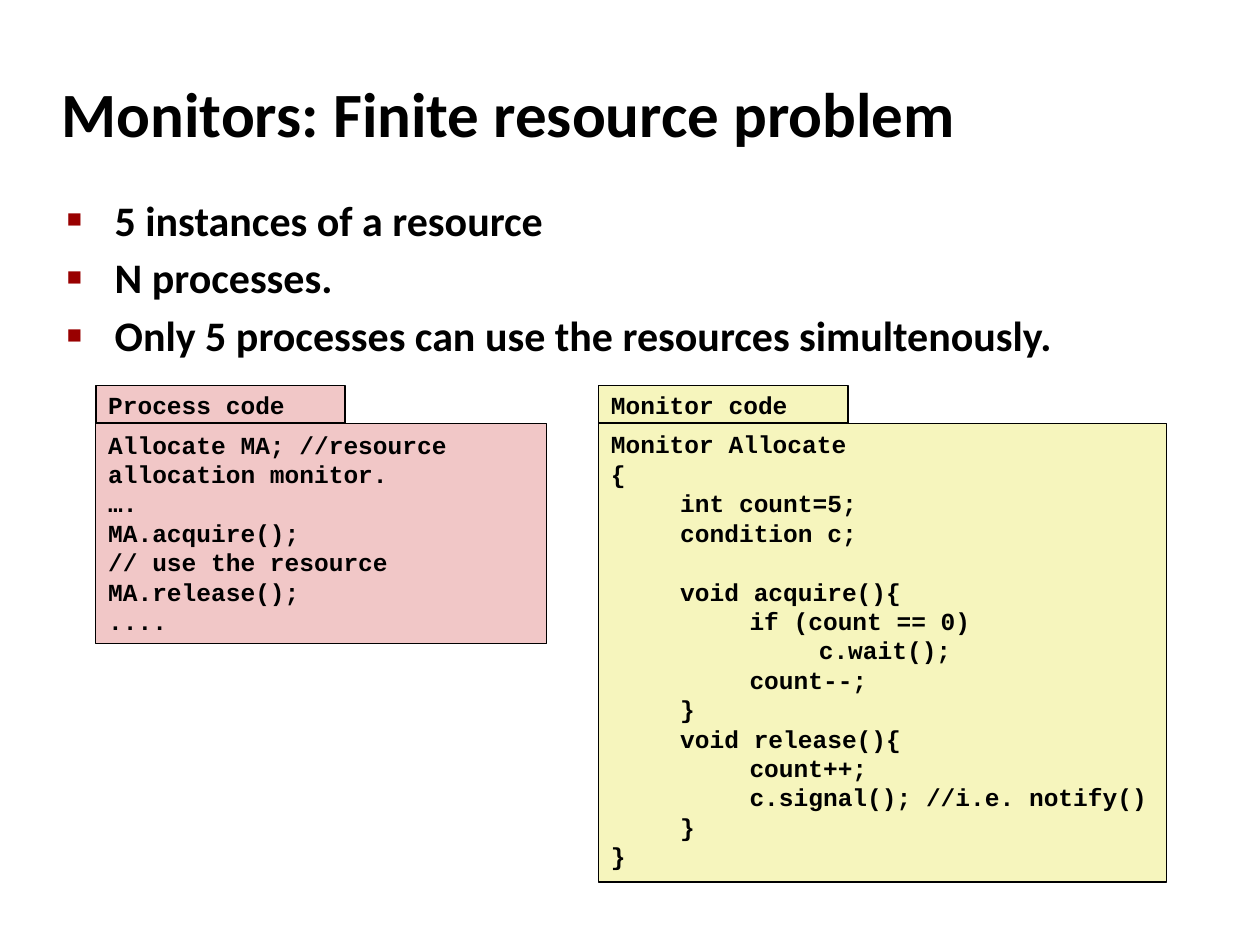
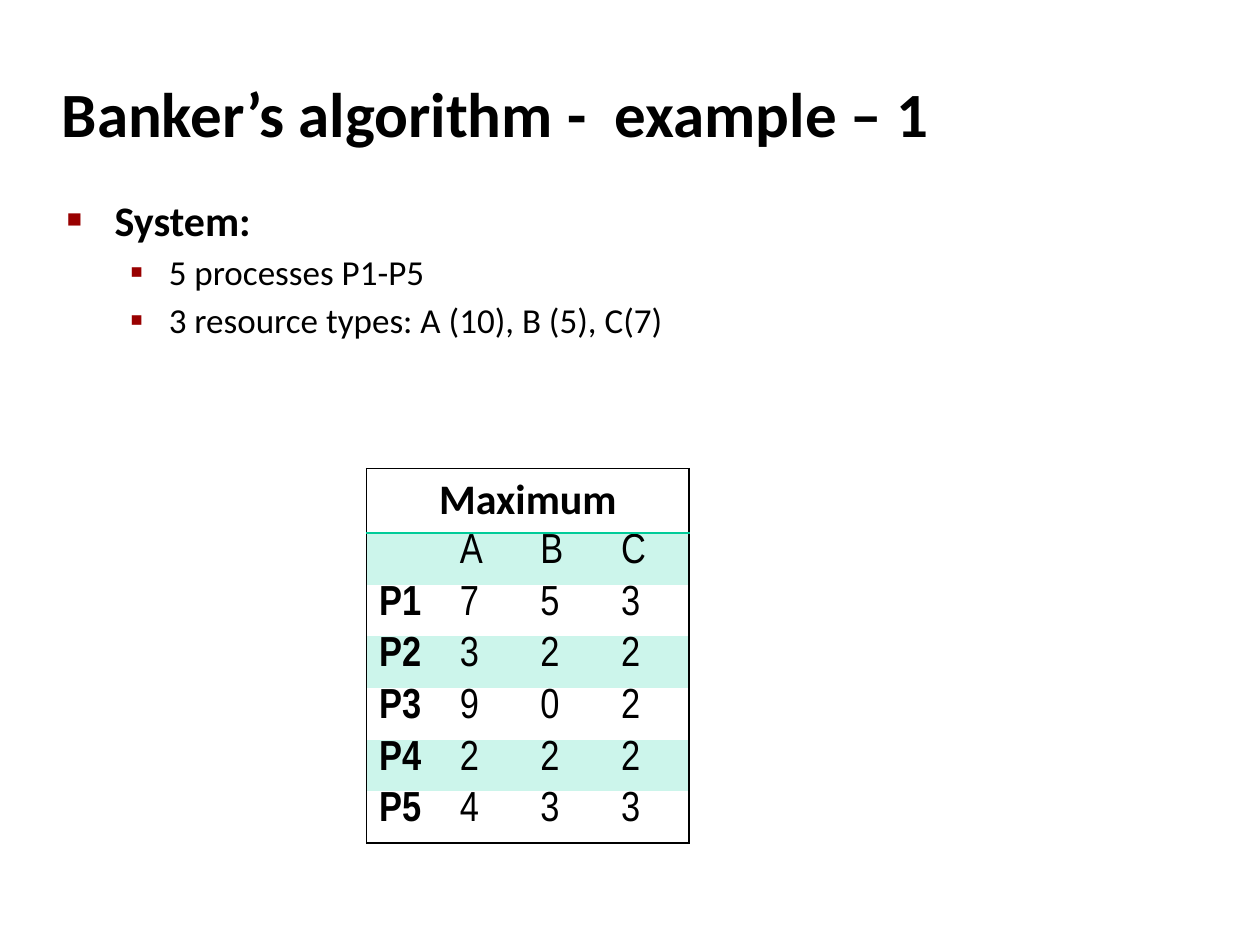
from lxml.etree import SubElement as Sub, Element
from pptx import Presentation
from pptx.dml.color import RGBColor
from pptx.enum.shapes import MSO_SHAPE as Shape
from pptx.enum.text import MSO_ANCHOR as Anchor, MSO_AUTO_SIZE as Auto, PP_ALIGN as Align
from pptx.oxml.ns import qn
from pptx.util import Pt

SCALE = 9144  # EMU in one px, at 100 px to the inch

BLACK = RGBColor(0x00, 0x00, 0x00)
RED = RGBColor(0x99, 0x00, 0x00)
PINK = RGBColor(0xF1, 0xC7, 0xC7)
CREAM = RGBColor(0xF6, 0xF5, 0xBD)
TEAL = RGBColor(0x00, 0xCC, 0x99)
MINT = RGBColor(0xCC, 0xF5, 0xEB)

SANS, MONO, NARROW = "Calibri", "Courier New", "Arial Narrow"
NO_STYLE = "{2D5ABB26-0587-4C30-8999-92F81FD0307C}"

# Bullet levels: size, bold, left margin, hanging indent, sign, sign percent
LEVELS = (
    (24, True, 38, 38, "■", 60),
    (20, False, 81, 31, "▪", 110),
)

PROCESS = (
    "Allocate MA; //resource allocation monitor.",
    "….",
    "MA.acquire();",
    "// use the resource",
    "MA.release();",
    "....",
)
MONITOR = (
    "Monitor Allocate",
    "{",
    "\tint count=5;",
    "\tcondition c;",
    "",
    "\tvoid acquire(){",
    "\t\tif (count == 0)",
    "\t\t\tc.wait();",
    "\t\tcount--;",
    "\t}",
    "\tvoid release(){",
    "\t\tcount++;",
    "\t\tc.signal(); //i.e. notify()",
    "\t}",
    "}",
)
NEEDS = (
    ("", "A", "B", "C"),
    ("P1", "7", "5", "3"),
    ("P2", "3", "2", "2"),
    ("P3", "9", "0", "2"),
    ("P4", "2", "2", "2"),
    ("P5", "4", "3", "3"),
)


def px(n):
    return n * SCALE


class Deck:
    """Holds the style and the current slide."""

    def __init__(self):
        self.prs = Presentation()
        self.prs.slide_width, self.prs.slide_height = px(1000), px(750)
        self.slide = None

    def style(self, para, size, bold=True, face=SANS):
        for font in [run.font for run in para.runs] or [para.font]:
            font.name, font.size, font.bold = face, Pt(size), bold
            font.color.rgb = BLACK

    def place(self, shape, left, top, width, height):
        shape.left, shape.top = px(left), px(top)
        shape.width, shape.height = px(width), px(height)

    def start(self, title):
        self.slide = self.prs.slides.add_slide(self.prs.slide_layouts[1])
        head = self.slide.shapes.title
        self.place(head, 39, 48, 830, 83)
        frame = head.text_frame
        frame.text = title
        frame.auto_size, frame.vertical_anchor = Auto.NONE, Anchor.MIDDLE
        frame.paragraphs[0].alignment = Align.LEFT
        self.style(frame.paragraphs[0], 36)

    def list(self, height, items):
        """Fill the body with (level, text) items."""
        body = self.slide.placeholders[1]
        self.place(body, 43, 149, 864, height)
        frame = body.text_frame
        frame.text = "\n".join(text for _, text in items)
        frame.auto_size, frame.vertical_anchor = Auto.NONE, Anchor.TOP
        for i, (para, (level, _)) in enumerate(zip(frame.paragraphs, items)):
            size, bold, left, hang, sign, part = LEVELS[level]
            para.level = level
            props = para._p.get_or_add_pPr()
            props.set("marL", str(px(left)))
            props.set("indent", str(-px(hang)))
            Sub(Sub(props, qn("a:buClr")), qn("a:srgbClr"), val=str(RED))
            Sub(props, qn("a:buSzPct"), val=str(part * 1000))
            Sub(props, qn("a:buFont"), typeface="Arial")
            Sub(props, qn("a:buChar"), char=sign)
            para.space_before = Pt(round(size * 0.17, 1) if i else 0)
            self.style(para, size, bold)

    def box(self, group, left, top, width, height, fill, weight, lines):
        rect = group.shapes.add_shape(
            Shape.RECTANGLE, px(left), px(top), px(width), px(height))
        rect.shadow.inherit = False
        rect.fill.solid()
        rect.fill.fore_color.rgb = fill
        rect.line.color.rgb, rect.line.width = BLACK, Pt(weight)
        frame = rect.text_frame
        frame.word_wrap, frame.vertical_anchor = True, Anchor.TOP
        frame.text = "\n".join(lines)
        for para in frame.paragraphs:
            para.alignment = Align.LEFT
            if "\t" in para.text:
                tabs = Sub(para._p.get_or_add_pPr(), qn("a:tabLst"))
                for stop in range(1, 4):
                    Sub(tabs, qn("a:tab"), pos=str(px(55 * stop)), algn="l")
            self.style(para, 14, face=MONO)
        return frame

    def code(self, left, width, height, fill, name, lines):
        """A code panel with a name tab on top of it."""
        group = self.slide.shapes.add_group_shape()
        self.box(group, left, 336, width, height, fill, 0.75, lines)
        tab = self.box(group, left, 306, 198, 30, fill, 1, [name])
        tab.vertical_anchor = Anchor.MIDDLE

    def edges(self, cell, sides):
        props = cell._tc.get_or_add_tcPr()
        for i, (side, color) in enumerate(sides):
            line = Element(qn("a:ln" + side), w=str(Pt(1)))
            Sub(Sub(line, qn("a:solidFill")), qn("a:srgbClr"), val=str(color))
            props.insert(i, line)

    def table(self, left, top, title, data):
        rows, cols = len(data) + 1, len(data[0])
        wide, tall, first = 64, 41, 51
        grid = self.slide.shapes.add_table(
            rows, cols, px(left), px(top),
            px(wide * cols), px(first + tall * len(data))).table
        grid._tbl.tblPr.find(qn("a:tableStyleId")).text = NO_STYLE
        for col in grid.columns:
            col.width = px(wide)
        for i, row in enumerate(grid.rows):
            row.height = px(tall if i else first)
        grid.cell(0, 0).merge(grid.cell(0, cols - 1))

        for r, words in enumerate([(title,) + ("",) * (cols - 1), *data]):
            for c, word in enumerate(words):
                cell = grid.cell(r, c)
                if r % 2:
                    cell.fill.solid()
                    cell.fill.fore_color.rgb = MINT
                else:
                    cell.fill.background()
                if r:
                    cell.margin_top = cell.margin_bottom = 0
                cell.text_frame.text = word
                para = cell.text_frame.paragraphs[0]
                para.alignment = Align.LEFT if r else Align.CENTER
                self.style(para, 24, r == 0 or c == 0, NARROW if r else SANS)
                rules = (
                    ("L", BLACK, c == 0),
                    ("R", BLACK, c == cols - 1 or r == 0),
                    ("T", BLACK, r == 0),
                    ("B", BLACK if r else TEAL, r in (0, rows - 1)),
                )
                self.edges(cell, [(s, color) for s, color, on in rules if on])


def main():
    deck = Deck()

    # Monitors
    deck.start("Monitors: Finite resource problem")
    deck.list(157, [
        (0, "5 instances of a resource"),
        (0, "N processes."),
        (0, "Only 5 processes can use the resources simultenously."),
    ])
    deck.code(76, 358, 175, PINK, "Process code", PROCESS)
    deck.code(475, 451, 364, CREAM, "Monitor code", MONITOR)

    # Banker's algorithm
    deck.start("Banker’s algorithm -  example – 1")
    deck.list(544, [
        (0, "System:"),
        (1, "5 processes P1-P5"),
        (1, "3 resource types: A (10), B (5), C(7)"),
    ])
    deck.table(291, 372, "Maximum", NEEDS)

    deck.prs.save("out.pptx")


if __name__ == "__main__":
    main()
